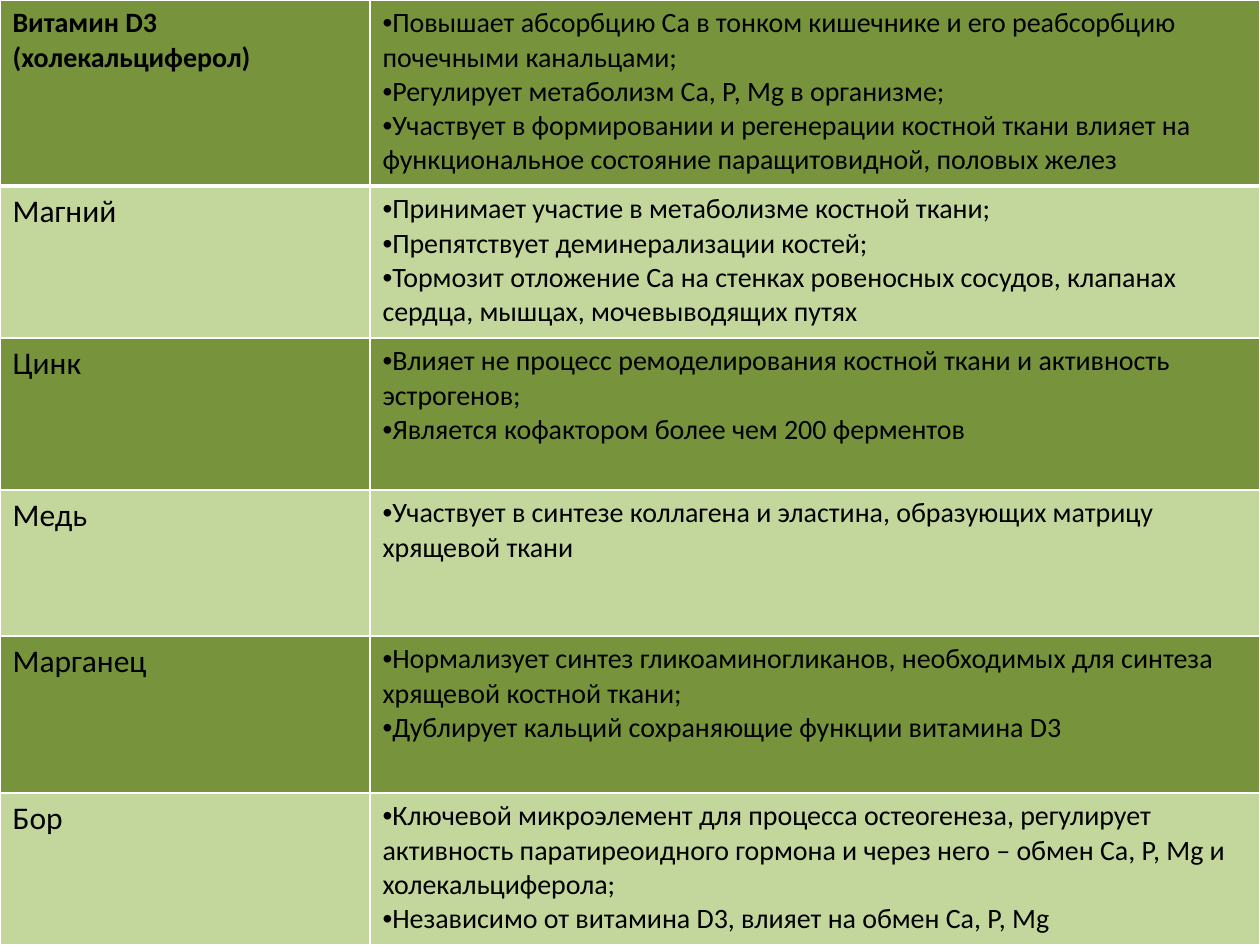
from dataclasses import dataclass

from lxml.etree import SubElement
from pptx import Presentation
from pptx.dml.color import RGBColor
from pptx.oxml.ns import qn
from pptx.table import _Cell as Cell
from pptx.util import Emu, Pt

PX = 914400 / 126
FONT = "Calibri"
DARK, LIGHT, WHITE, BLACK = "77933C", "C3D69B", "FFFFFF", "000000"
COLUMN_WIDTHS = (370, 890)


@dataclass
class Nutrient:
    """One table row: a nutrient and its effects on bone."""
    name: str
    height: int
    effects: tuple[str, ...]


NUTRIENTS = (
    Nutrient("Витамин D3 (холекальциферол)", 186, (
        "Повышает абсорбцию Са в тонком кишечнике и его реабсорбцию почечными канальцами;",
        "Регулирует метаболизм Са, Р, Мg в организме;",
        "Участвует в формировании и регенерации костной ткани влияет на функциональное "
        "состояние паращитовидной, половых желез")),
    Nutrient("Магний", 152, (
        "Принимает участие в метаболизме костной ткани;",
        "Препятствует деминерализации костей;",
        "Тормозит отложение Са на стенках ровеносных сосудов, клапанах сердца, мышцах, "
        "мочевыводящих путях")),
    Nutrient("Цинк", 152, (
        "Влияет не процесс ремоделирования костной ткани и активность эстрогенов;",
        "Является кофактором более чем 200 ферментов")),
    Nutrient("Медь", 146, (
        "Участвует в синтезе коллагена и эластина, образующих матрицу хрящевой ткани",)),
    Nutrient("Марганец", 157, (
        "Нормализует синтез гликоаминогликанов, необходимых для синтеза хрящевой костной ткани;",
        "Дублирует кальций сохраняющие функции витамина D3")),
    Nutrient("Бор", 152, (
        "Ключевой микроэлемент для процесса остеогенеза, регулирует активность "
        "паратиреоидного гормона и через него – обмен Са, Р, Мg и холекальциферола;",
        "Независимо от витамина D3, влияет на обмен Са, Р, Мg")),
)


def px(length: int) -> Emu:
    """Turn pixels into EMU."""
    return Emu(round(length * PX))


def paint(fill, color: str) -> None:
    """Give a fill one solid colour."""
    fill.solid()
    fill.fore_color.rgb = RGBColor.from_string(color)


def style_cell(cell: Cell, color: str, top: int, bottom: int) -> None:
    """Draw white borders, with widths in points, and fill the cell."""
    properties = cell._tc.get_or_add_tcPr()
    for side, width in (("L", 1), ("R", 1), ("T", top), ("B", bottom)):
        line = SubElement(properties, qn(f"a:ln{side}"), w=str(Pt(width)))
        solid = SubElement(line, qn("a:solidFill"))
        SubElement(solid, qn("a:srgbClr"), val=WHITE)
    paint(cell.fill, color)


def write_cell(cell: Cell, lines: tuple[str, ...], size: int,
               bold: bool = False, bulleted: bool = False) -> None:
    """Write one paragraph per line, with bullets where asked."""
    cell.text = "\n".join(lines)
    for paragraph in cell.text_frame.paragraphs:
        if bulleted:
            properties = paragraph._p.get_or_add_pPr()
            SubElement(properties, qn("a:buFont"), typeface="Arial")
            SubElement(properties, qn("a:buChar"), char="•")
        font = paragraph.font
        font.name, font.size, font.bold = FONT, Pt(size), bold
        font.color.rgb = RGBColor.from_string(BLACK)


def add_nutrient_table(slide, nutrients: tuple[Nutrient, ...]) -> None:
    """Fill the slide with the banded table of nutrients."""
    table = slide.shapes.add_table(
        len(nutrients), len(COLUMN_WIDTHS), 0, 0, px(sum(COLUMN_WIDTHS)),
        px(sum(nutrient.height for nutrient in nutrients))).table
    table.first_row = table.horz_banding = False
    for column, width in zip(table.columns, COLUMN_WIDTHS):
        column.width = px(width)
    for index, (row, nutrient) in enumerate(zip(table.rows, nutrients)):
        row.height = px(nutrient.height)
        heading = index == 0
        for cell in row.cells:
            style_cell(cell, LIGHT if index % 2 else DARK,
                       top=3 if index == 1 else 1, bottom=3 if heading else 1)
        name_cell, effects_cell = row.cells
        write_cell(name_cell, (nutrient.name,), 16 if heading else 18, bold=heading)
        write_cell(effects_cell, nutrient.effects, 16, bulleted=True)


def main() -> None:
    """Build and save the slide."""
    presentation = Presentation()
    presentation.slide_width, presentation.slide_height = px(1260), px(945)
    slide = presentation.slides.add_slide(presentation.slide_layouts[6])
    paint(slide.background.fill, LIGHT)
    add_nutrient_table(slide, NUTRIENTS)
    presentation.save("out.pptx")


if __name__ == "__main__":
    main()
